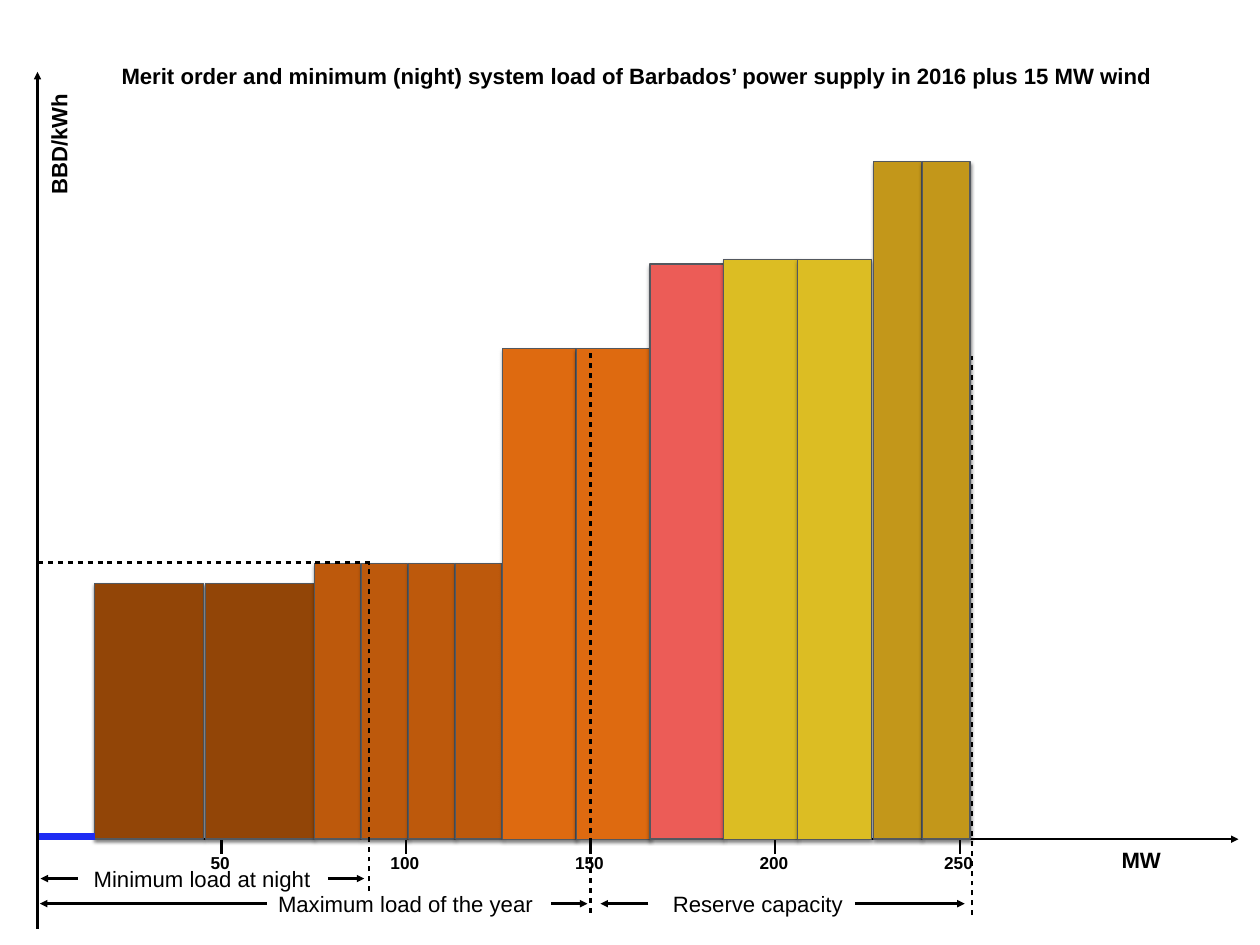
"""Build the merit order slide for the power supply of Barbados."""
from lxml import etree
from pptx import Presentation
from pptx.dml.color import RGBColor
from pptx.enum.shapes import MSO_CONNECTOR, MSO_SHAPE
from pptx.enum.text import MSO_ANCHOR, MSO_AUTO_SIZE, PP_ALIGN
from pptx.oxml.ns import qn
from pptx.util import Pt

RECT = MSO_SHAPE.RECTANGLE
STRAIGHT = MSO_CONNECTOR.STRAIGHT
MIDDLE = MSO_ANCHOR.MIDDLE
GROW = MSO_AUTO_SIZE.SHAPE_TO_FIT_TEXT
CENTER = PP_ALIGN.CENTER

BLACK = RGBColor(0x00, 0x00, 0x00)
BLUE = RGBColor(0x1E, 0x2C, 0xF3)
SLATE = RGBColor(0x53, 0x58, 0x5F)
BROWN = RGBColor(0x92, 0x45, 0x07)
RUST = RGBColor(0xBD, 0x59, 0x0C)
ORANGE = RGBColor(0xDE, 0x6A, 0x10)
RED = RGBColor(0xEC, 0x5C, 0x57)
YELLOW = RGBColor(0xDC, 0xBD, 0x23)
GOLD = RGBColor(0xC3, 0x97, 0x1A)

FONT = "Arial"
BASE = 682
ZERO = 30
SCALE = 3

# left, pitch, width, top, count, colour
BLOCKS = [
    (77, 90, 88.6, 474.5, 2, BROWN),
    (255.6, 38.3, 37.5, 458, 4, RUST),
    (408.3, 60, 59.8, 283, 2, ORANGE),
    (528.3, 60, 59.8, 214.5, 1, RED),
    (588.3, 60, 59.8, 211, 2, YELLOW),
    (709.8, 39.7, 38.9, 131.5, 2, GOLD),
]
ARROWS = [
    (266.4, 714, 296, 714),
    (63.4, 714, 33, 714),
    (448, 734.4, 477.4, 734.4),
    (216.7, 734.4, 32.4, 734.4),
    (694.8, 734.4, 784, 734.4),
    (527, 734.4, 488, 734.4),
]
DASHES = [
    (300, 724.3, 300, 458),
    (31, 457.2, 304, 457.2),
    (480, 741.6, 480, 286.5),
    (790, 743.8, 790, 285),
]
NOTES = [
    ("Minimum load at night", 70.6, 699, 187),
    ("Maximum load of the year", 221, 719.3, 217),
    ("Reserve capacity", 541.4, 719.3, 149),
]


def add_line(slide, ends, color=BLACK, width=2, arrow=False, dash=False):
    """Draw a straight line between two points."""
    line = slide.shapes.add_connector(STRAIGHT, *map(Pt, ends))
    line.line.color.rgb = color
    line.line.width = Pt(width)
    stroke = line.line._get_or_add_ln()
    if dash:
        style = etree.SubElement(stroke, qn("a:custDash"))
        etree.SubElement(style, qn("a:ds"), d="200000", sp="200000")
    if arrow:
        etree.SubElement(stroke, qn("a:tailEnd"), type="triangle")
    etree.SubElement(line._element.spPr, qn("a:effectLst"))


def add_bar(slide, left, top, width, color):
    """Draw one power unit as a bar with a soft shadow."""
    box = map(Pt, (left, top, width, BASE - top))
    bar = slide.shapes.add_shape(RECT, *box)
    bar.fill.solid()
    bar.fill.fore_color.rgb = color
    bar.line.color.rgb = SLATE
    bar.line.width = Pt(1)
    bar.shadow.inherit = False
    effects = bar._element.spPr.find(qn("a:effectLst"))
    shade = etree.SubElement(effects, qn("a:outerShdw"), blurRad=str(Pt(3)),
                             dist=str(Pt(2)), dir="5400000", rotWithShape="0")
    tint = etree.SubElement(shade, qn("a:srgbClr"), val=str(BLACK))
    etree.SubElement(tint, qn("a:alpha"), val="50000")


def add_text(slide, text, left, top, width, height=30, size=18, bold=True, turn=0):
    """Place one centred line of text."""
    box = slide.shapes.add_textbox(*map(Pt, (left, top, width, height)))
    box.rotation = turn
    frame = box.text_frame
    frame.word_wrap = False
    frame.auto_size = GROW
    frame.vertical_anchor = MIDDLE
    frame.margin_left = frame.margin_right = Pt(4)
    frame.margin_top = frame.margin_bottom = Pt(4)
    para = frame.paragraphs[0]
    para.text = text
    para.alignment = CENTER
    para.font.name = FONT
    para.font.size = Pt(size)
    para.font.bold = bold
    para.font.color.rgb = BLACK


def main():
    """Build and save the slide."""
    deck = Presentation()
    deck.slide_width, deck.slide_height = Pt(1024), Pt(768)
    slide = deck.slides.add_slide(deck.slide_layouts[6])

    add_line(slide, (31.5, BASE, 1006.5, BASE), arrow=True)
    add_line(slide, (30.5, 755, 30.5, 58.5), arrow=True)
    for left, pitch, width, top, count, color in BLOCKS:
        for index in range(count):
            add_bar(slide, left + index * pitch, top, width, color)

    add_text(slide, "BBD/kWh", 2, 102.2, 91, turn=270)
    add_text(slide, "MW", 907, 683.3, 41)
    for load in range(50, 251, 50):
        tick = ZERO + SCALE * load
        add_line(slide, (tick, 683, tick, 694))
        add_text(slide, str(load), tick - 17, 688.3, 32, 25, 14)

    for ends in DASHES:
        add_line(slide, ends, dash=True)
    for text, left, top, width in NOTES:
        add_text(slide, text, left, top, width, bold=False)
    for ends in ARROWS:
        add_line(slide, ends, arrow=True)
    add_line(slide, (31.5, 679.7, 77, 679.7), BLUE, 6)
    add_text(slide, "Merit order and minimum (night) system load of Barbados’ "
             "power supply in 2016 plus 15 MW wind", 94.3, 46.8, 846)
    deck.save("out.pptx")


if __name__ == "__main__":
    main()
